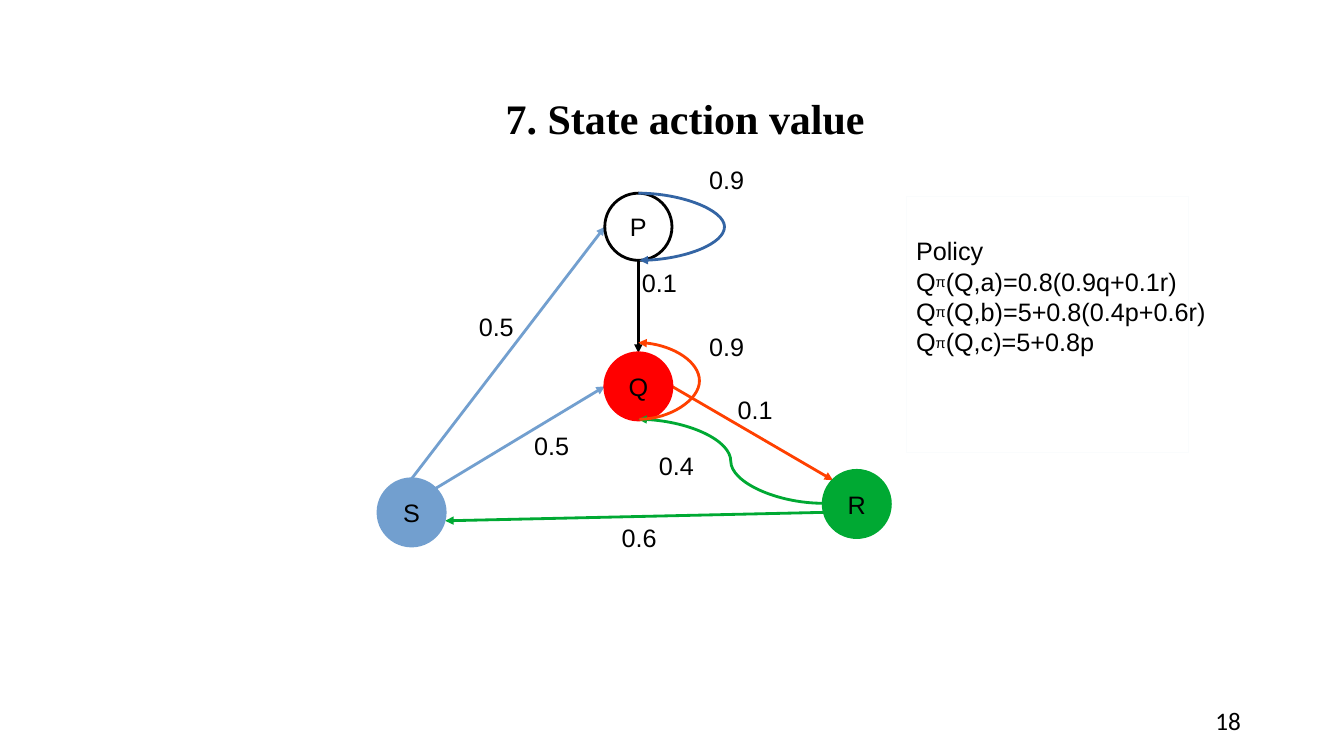
from dataclasses import dataclass

from lxml.etree import SubElement
from pptx import Presentation
from pptx.dml.color import RGBColor
from pptx.enum.shapes import MSO_CONNECTOR, MSO_SHAPE
from pptx.enum.text import MSO_ANCHOR, PP_ALIGN
from pptx.oxml.ns import qn
from pptx.shapes.autoshape import Shape
from pptx.slide import Slide
from pptx.util import Pt

BLACK = RGBColor(0x00, 0x00, 0x00)
WHITE = RGBColor(0xFF, 0xFF, 0xFF)
PALE = RGBColor(0xFA, 0xFC, 0xFD)
SKY = RGBColor(0x72, 0x9F, 0xCF)
GREEN = RGBColor(0x00, 0xA9, 0x33)
RED = RGBColor(0xFF, 0x00, 0x00)
ORANGE = RGBColor(0xFF, 0x40, 0x00)
NAVY = RGBColor(0x34, 0x65, 0xA4)

NODE = 48  # diameter of a state
TAG_W, TAG_H = 78, 47.5  # size of a probability label


@dataclass
class Node:
    name: str
    left: float
    top: float
    fill: RGBColor
    line: RGBColor


@dataclass
class Tag:
    text: str
    left: float
    top: float


@dataclass
class Arrow:
    start: tuple[float, float]
    end: tuple[float, float]
    color: RGBColor
    bend: float | None = None  # sideways reach of a curve from its start


NODES = [
    Node("S", 270, 342, SKY, SKY),
    Node("R", 588, 336, GREEN, GREEN),
    Node("Q", 432, 252, RED, RED),
    Node("P", 432, 138, WHITE, BLACK),
]
TAGS = [
    Tag("0.1", 432, 178),
    Tag("0.9", 480, 223.5),
    Tag("0.1", 500.4, 268.5),
    Tag("0.6", 417.6, 360),
    Tag("0.5", 315.5, 209.5),
    Tag("0.5", 355, 294.5),
    Tag("0.9", 480, 104.4),
    Tag("0.4", 444.2, 309),
]
ARROWS = [
    Arrow((456, 186), (456, 252), BLACK),
    Arrow((588, 366), (318, 372), GREEN),
    Arrow((294, 342), (432, 162), SKY),
    Arrow((311, 349), (432, 276), SKY),
    Arrow((480, 276), (595, 343), ORANGE),
]
CURVES = [
    Arrow((588, 359.5), (456, 299.5), GREEN, -66),
    Arrow((456.8, 299.5), (456, 244.8), ORANGE, 43.2),
    Arrow((456, 138), (456.8, 186), NAVY, 62),
]
POLICY = ["(Q,a)=0.8(0.9q+0.1r)", "(Q,b)=5+0.8(0.4p+0.6r)", "(Q,c)=5+0.8p"]


def add_box(slide: Slide, kind: MSO_SHAPE, left: float, top: float,
            width: float, height: float, fill: RGBColor) -> Shape:
    box = slide.shapes.add_shape(kind, Pt(left), Pt(top), Pt(width), Pt(height))
    box.shadow.inherit = False
    box.fill.solid()
    box.fill.fore_color.rgb = fill
    box.line.fill.background()
    return box


def write(box: Shape, text: str, align: PP_ALIGN, font: str = "Arial",
          size: float = 18, bold: bool = False) -> None:
    frame = box.text_frame
    frame.word_wrap = True
    frame.vertical_anchor = MSO_ANCHOR.MIDDLE
    frame.text = text
    for par in frame.paragraphs:
        par.alignment = align
        par.font.name = font
        par.font.size = Pt(size)
        par.font.bold = bold
        par.font.color.rgb = BLACK


def add_node(slide: Slide, node: Node) -> None:
    disc = add_box(slide, MSO_SHAPE.OVAL, node.left, node.top, NODE, NODE, node.fill)
    disc.line.color.rgb = node.line
    disc.line.width = Pt(2)
    write(disc, node.name, PP_ALIGN.CENTER)


def add_tag(slide: Slide, tag: Tag) -> None:
    box = add_box(slide, MSO_SHAPE.RECTANGLE, tag.left, tag.top, TAG_W, TAG_H, WHITE)
    write(box, tag.text, PP_ALIGN.CENTER)


def add_arrow(slide: Slide, arrow: Arrow) -> None:
    curved = arrow.bend is not None
    kind = MSO_CONNECTOR.CURVE if curved else MSO_CONNECTOR.STRAIGHT
    ends = [Pt(n) for n in arrow.start + arrow.end]
    link = slide.shapes.add_connector(kind, *ends)
    link.line.color.rgb = arrow.color
    props = link._element.spPr
    if curved:
        ratio = arrow.bend / (arrow.end[0] - arrow.start[0])
        guides = props.find(qn("a:prstGeom")).find(qn("a:avLst"))
        SubElement(guides, qn("a:gd"), name="adj1", fmla=f"val {round(ratio * 100000)}")
    else:
        link.line.width = Pt(2)
    SubElement(props.find(qn("a:ln")), qn("a:tailEnd"), type="triangle")
    SubElement(props, qn("a:effectLst"))


def add_policy(slide: Slide) -> None:
    box = add_box(slide, MSO_SHAPE.RECTANGLE, 647.3, 140.4, 201.6, 182.9, WHITE)
    box.line.color.rgb = PALE
    write(box, "\n".join(["Policy"] + ["Q"] * len(POLICY)), PP_ALIGN.LEFT)
    frame = box.text_frame
    frame.word_wrap = False
    frame.vertical_anchor = MSO_ANCHOR.TOP
    frame.margin_top = Pt(28)
    for par, rest in zip(frame.paragraphs[1:], POLICY):
        power = par.add_run()
        power.text = "π"
        power._r.get_or_add_rPr().set("baseline", "14000")
        par.add_run().text = rest


def main() -> None:
    deck = Presentation()
    deck.slide_width, deck.slide_height = Pt(960), Pt(540)
    slide = deck.slides.add_slide(deck.slide_layouts[5])

    # Title and page number
    title = slide.shapes.title
    title.left, title.top, title.width, title.height = Pt(72), Pt(32), Pt(835), Pt(104)
    write(title, "7. State action value", PP_ALIGN.CENTER, "Times New Roman", 30, True)
    page = slide.shapes.add_textbox(Pt(678), Pt(500.4), Pt(215.5), Pt(28))
    write(page, "18", PP_ALIGN.RIGHT, "Calibri")

    # Policy formulas
    add_policy(slide)

    # State graph: labels, states, then arrows on top
    for tag in TAGS:
        add_tag(slide, tag)
    for arrow in ARROWS:
        add_arrow(slide, arrow)
    for node in NODES:
        add_node(slide, node)
    for curve in CURVES:
        add_arrow(slide, curve)

    deck.save("out.pptx")


if __name__ == "__main__":
    main()
